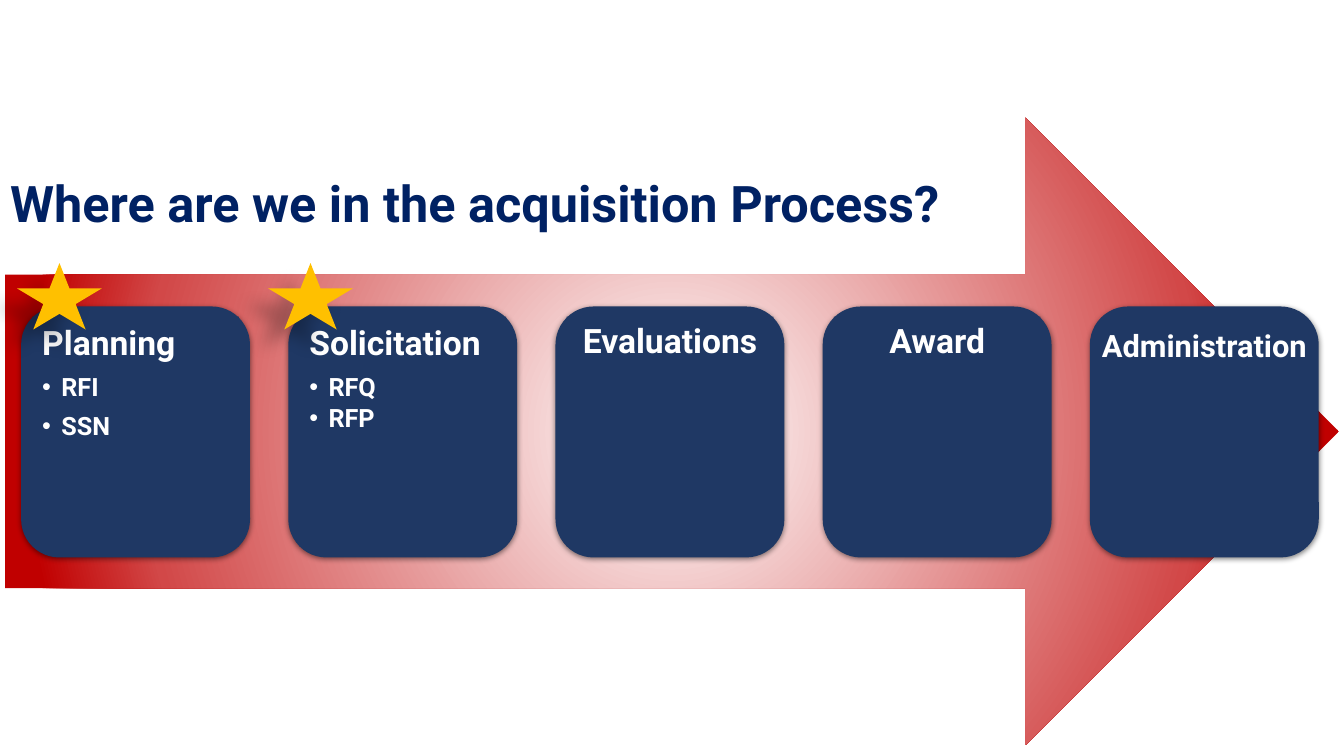
from dataclasses import dataclass

from lxml.etree import SubElement
from pptx import Presentation
from pptx.dml.color import RGBColor
from pptx.enum.shapes import MSO_SHAPE as Shape
from pptx.enum.text import MSO_ANCHOR as Anchor, MSO_AUTO_SIZE as AutoSize, PP_ALIGN as Align
from pptx.oxml import parse_xml
from pptx.oxml.ns import nsdecls, qn
from pptx.util import Inches, Pt


@dataclass(frozen=True)
class Theme:
    font: str = "Roboto"
    title: str = "002163"
    card: str = "1F3864"
    text: str = "FFFFFF"
    star: str = "FFC000"
    shadow: str = "000000"
    arrow_stops: tuple = ((0, "FFFFFF"), (72, "D24848"), (88, "C00000"), (100, "C00000"))
    title_size: float = 36
    heading_size: float = 24
    long_heading_size: float = 22
    item_size: float = 18


THEME = Theme()

# Heading, listed documents, space before each document, starred
STAGES = [
    ("Planning", ["RFI", "SSN"], [8.4, 8.4], True),
    ("Solicitation", ["RFQ", "RFP"], [8.4, 2.7], True),
    ("Evaluations", [], [], False),
    ("Award", [], [], False),
    ("Administration", [], [], False),
]
CARD_PITCH = 2.65
STAR_PITCH = 2.49


def add_shape(slide, kind, box, color=None):
    shape = slide.shapes.add_shape(kind, *map(Inches, box))
    shape.shadow.inherit = False
    shape.line.fill.background()
    if color:
        shape.fill.solid()
        shape.fill.fore_color.rgb = RGBColor.from_string(color)
    else:
        shape.fill.background()
    return shape


def add_shadow(shape, alpha, blur, distance, angle):
    effects = shape._element.spPr.find(qn("a:effectLst"))
    outer = SubElement(effects, qn("a:outerShdw"), blurRad=str(Pt(blur)), dist=str(Pt(distance)),
                       dir=str(angle * 60000), algn="ctr", rotWithShape="0")
    color = SubElement(outer, qn("a:srgbClr"), val=THEME.shadow)
    SubElement(color, qn("a:alpha"), val=str(alpha * 1000))


def prepare_frame(frame, inset, anchor=Anchor.TOP):
    frame.word_wrap = True
    frame.vertical_anchor = anchor
    frame.margin_left = frame.margin_right = Inches(inset)
    frame.margin_top = frame.margin_bottom = Inches(inset)


def write(paragraph, text, size, color=THEME.text, align=Align.LEFT,
          line_spacing=0.9, space_before=0, bullet=False):
    if bullet:
        paragraph.level = 1
        properties = paragraph._p.get_or_add_pPr()
        properties.set("marL", str(Inches(0.19)))
        properties.set("indent", str(-Inches(0.19)))
        bullet_color = SubElement(properties, qn("a:buClr"))
        SubElement(bullet_color, qn("a:srgbClr"), val=color)
        SubElement(properties, qn("a:buFont"), typeface="Arial")
        SubElement(properties, qn("a:buChar"), char="•")
    paragraph.alignment = align
    paragraph.line_spacing = line_spacing
    paragraph.space_before = Pt(space_before)
    run = paragraph.add_run()
    run.text = text
    run.font.name = THEME.font
    run.font.size = Pt(size)
    run.font.bold = True
    run.font.color.rgb = RGBColor.from_string(color)


def add_title(slide, box):
    title = slide.shapes.title
    title.left, title.top, title.width, title.height = map(Inches, box)
    frame = title.text_frame
    prepare_frame(frame, 0.1, Anchor.MIDDLE)
    frame.auto_size = AutoSize.SHAPE_TO_FIT_TEXT
    write(frame.paragraphs[0], "Where are we in the acquisition Process?",
          THEME.title_size, color=THEME.title, line_spacing=1.0)


def add_process_arrow(slide, box):
    arrow = add_shape(slide, Shape.RIGHT_ARROW, box)
    stops = "".join(f'<a:gs pos="{position * 1000}"><a:srgbClr val="{color}"/></a:gs>'
                    for position, color in THEME.arrow_stops)
    gradient = parse_xml(
        f'<a:gradFill {nsdecls("a")} rotWithShape="1"><a:gsLst>{stops}</a:gsLst>'
        '<a:path path="circle"><a:fillToRect l="50000" t="50000" r="50000" b="50000"/>'
        '</a:path></a:gradFill>')
    properties = arrow._element.spPr
    properties.replace(properties.find(qn("a:noFill")), gradient)


def add_stage_card(slide, box, heading, documents, spaces):
    left, top, width, height = box
    card = add_shape(slide, Shape.ROUNDED_RECTANGLE, box, THEME.card)
    add_shadow(card, 49, 4, 1, 90)

    # A long heading takes the whole card width and a smaller size
    if len(heading) > 12:
        panel_box, panel_color = (left, top + 0.16, width, 2.11), None
        size = THEME.long_heading_size
    else:
        panel_box, panel_color = (left + 0.11, top + 0.1, width - 0.22, height - 0.21), THEME.card
        size = THEME.heading_size
    frame = add_shape(slide, Shape.RECTANGLE, panel_box, panel_color).text_frame
    prepare_frame(frame, 0.1 if documents else 0.08)
    write(frame.paragraphs[0], heading, size, align=Align.LEFT if documents else Align.CENTER)
    for document, space in zip(documents, spaces):
        write(frame.add_paragraph(), document, THEME.item_size, space_before=space, bullet=True)


def add_stages(slide, box):
    left, top, width, height = box
    for index, (heading, documents, spaces, _) in enumerate(STAGES):
        card_box = (left + index * CARD_PITCH, top, width - CARD_PITCH * (len(STAGES) - 1), height)
        add_stage_card(slide, card_box, heading, documents, spaces)


def add_stars(slide, box):
    left, top, width, height = box
    for index, (*_, starred) in enumerate(STAGES):
        if starred:
            star_box = (left + index * STAR_PITCH, top, width, height)
            star = add_shape(slide, Shape.STAR_5_POINT, star_box, THEME.star)
            add_shadow(star, 27, 11.8, 19.7, 141)


def main():
    deck = Presentation()
    deck.slide_width, deck.slide_height = Inches(13.33), Inches(7.5)
    slide = deck.slides.add_slide(deck.slide_layouts[5])
    add_title(slide, (0, 1.6, 10.01, 0.81))
    add_process_arrow(slide, (0.05, 1.17, 13.23, 6.22))
    add_stages(slide, (0.21, 3.04, 12.87, 2.49))
    add_stars(slide, (0.17, 2.61, 0.84, 0.66))
    deck.save("out.pptx")


if __name__ == "__main__":
    main()
